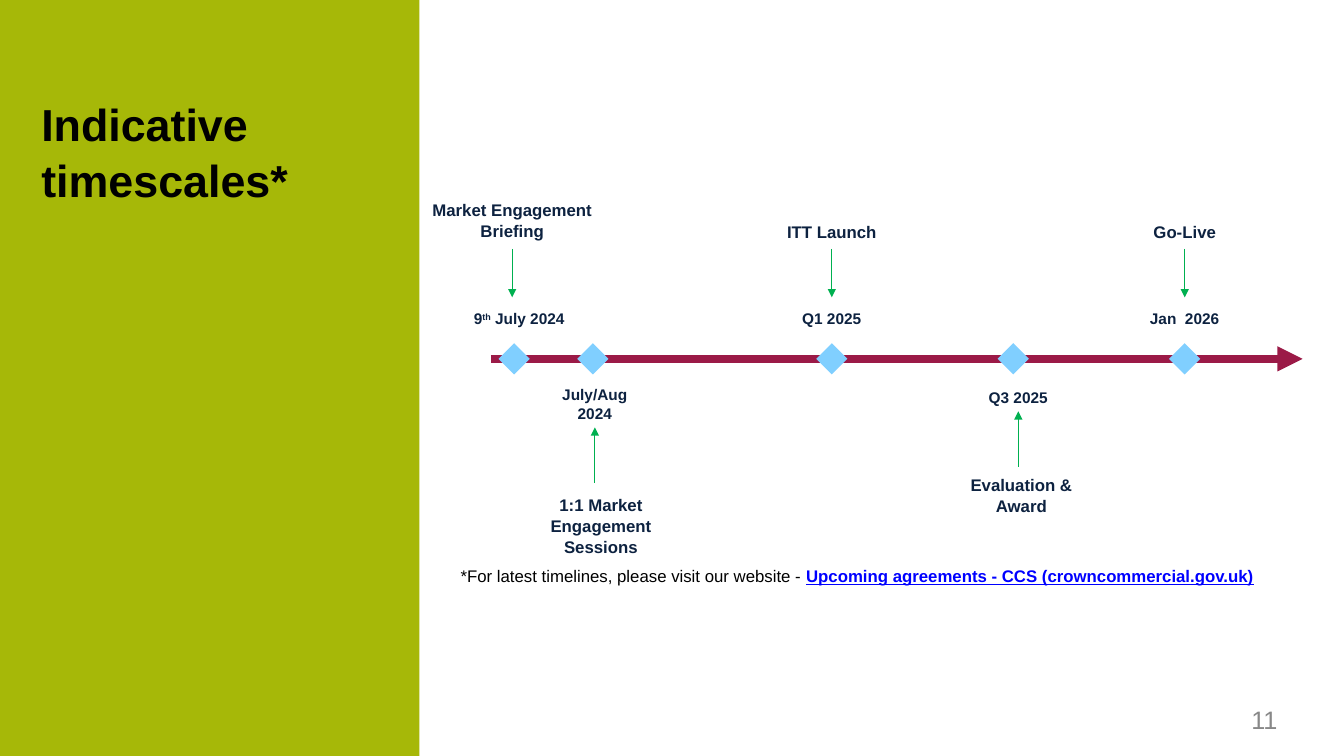
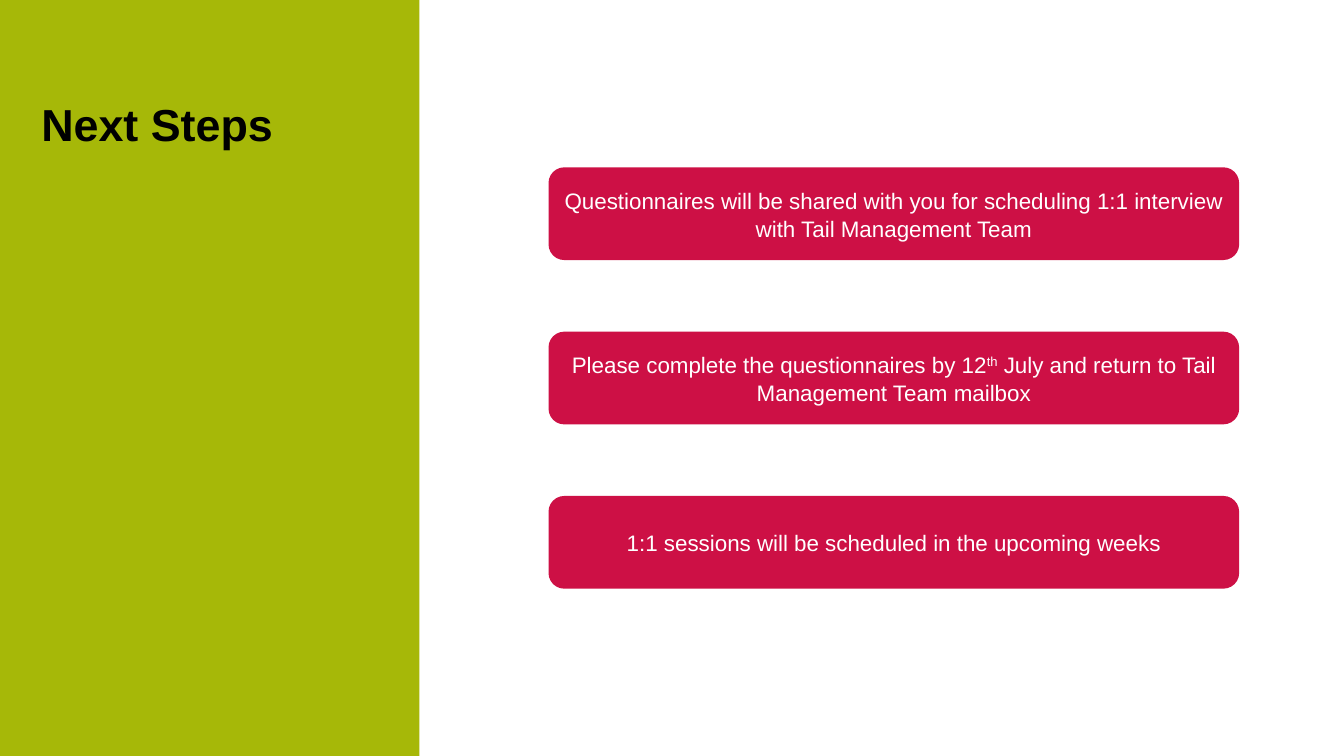
from lxml import etree
from pptx import Presentation
from pptx.dml.color import RGBColor
from pptx.enum import shapes, text
from pptx.oxml import ns
from pptx.util import Inches, Pt

COLORS = {
    "panel": "A6B808", "title": "000000", "number": "888888", "axis": "9B1A47",
    "diamond": "80CFFF", "label": "0D2240", "arrow": "00B050", "link": "0000FF",
    "step": "CD1045", "step_text": "FFFFFF",
}
FONT = "Arial"
SPACING = 1.05
CENTER, LEFT, RIGHT = text.PP_ALIGN.CENTER, text.PP_ALIGN.LEFT, text.PP_ALIGN.RIGHT


def write(sp, runs, size, align, insets=(0, 0), anchor=text.MSO_ANCHOR.TOP):
    tf = sp.text_frame
    tf.word_wrap = True
    tf.vertical_anchor = anchor
    tf.margin_left = tf.margin_right = Inches(insets[0])
    tf.margin_top = tf.margin_bottom = Inches(insets[1])
    p = tf.paragraphs[0]
    p.alignment = align
    p.line_spacing = SPACING
    for content, color, style in runs:
        r = p.add_run()
        r.text = content
        r.font.name = FONT
        r.font.size = Pt(size)
        r.font.color.rgb = RGBColor.from_string(COLORS[color])
        r.font.bold = "b" in style
        r.font.underline = "u" in style
        if "^" in style:
            r.font._element.set("baseline", "30000")


def add_arrow(s, start, end, color, width):
    line = s.shapes.add_connector(
        shapes.MSO_CONNECTOR.STRAIGHT, *[Inches(v) for v in (*start, *end)])
    line.line.color.rgb = RGBColor.from_string(COLORS[color])
    line.line.width = Pt(width)
    etree.SubElement(line.line._get_or_add_ln(), ns.qn("a:tailEnd"), type="triangle")
    etree.SubElement(line._element.spPr, ns.qn("a:effectLst"))


prs = Presentation()
prs.slide_width, prs.slide_height = Inches(13.33), Inches(7.5)

slides = []
for title in ("Indicative timescales*", "Next Steps"):
    s = prs.slides.add_slide(prs.slide_layouts[6])
    panel = s.shapes.add_shape(
        shapes.MSO_SHAPE.RECTANGLE, 0, 0, Inches(4.16), prs.slide_height)
    panel.shadow.inherit = False
    panel.fill.solid()
    panel.fill.fore_color.rgb = RGBColor.from_string(COLORS["panel"])
    panel.line.fill.background()
    sp = s.shapes.add_textbox(Inches(0.41), Inches(0.93), Inches(3.34), Inches(0.92))
    write(sp, [(title, "title", "b")], 32, LEFT)
    slides.append(s)
timeline, steps = slides

sp = timeline.shapes.add_textbox(Inches(12.18), Inches(6.97), Inches(0.49), Inches(0.31))
write(sp, [("11", "number", "")], 18, RIGHT)

AXIS_Y = 3.56
DIAMOND = 0.31
add_arrow(timeline, (4.87, AXIS_Y), (12.92, AXIS_Y), "axis", 6)

july_9 = [("9", "label", "b"), ("th", "label", "b^"), (" July 2024", "label", "b")]
milestones = [
    (5.1, july_9, (5.15, 3.06), 5.08, (2.47, 2.95),
     "Market Engagement Briefing", (5.08, 1.85)),
    (5.88, [("July/Aug 2024", "label", "b")], (5.9, 3.81), 5.9, (4.79, 4.24),
     "1:1 Market Engagement Sessions", (5.96, 4.78)),
    (8.25, [("Q1 2025", "label", "b")], (8.25, 3.06), 8.25, (2.47, 2.95),
     "ITT Launch", (8.25, 2.08)),
    (10.05, [("Q3 2025", "label", "b")], (10.1, 3.84), 10.1, (4.63, 4.08),
     "Evaluation & Award", (10.13, 4.58)),
    (11.75, [("Jan  2026", "label", "b")], (11.75, 3.06), 11.75, (2.47, 2.95),
     "Go-Live", (11.75, 2.08)),
]
for x, date, date_at, arrow_x, arrow_y, label, label_at in milestones:
    sp = timeline.shapes.add_shape(
        shapes.MSO_SHAPE.DIAMOND, Inches(x - DIAMOND / 2), Inches(AXIS_Y - DIAMOND / 2),
        Inches(DIAMOND), Inches(DIAMOND))
    sp.shadow.inherit = False
    sp.fill.solid()
    sp.fill.fore_color.rgb = RGBColor.from_string(COLORS["diamond"])
    sp.line.fill.background()

    add_arrow(timeline, (arrow_x, arrow_y[0]), (arrow_x, arrow_y[1]), "arrow", 0.75)

    above = label_at[1] < AXIS_Y
    label_width, label_height = (2.19, 0.42) if above else (1.68, 0.94)
    for runs, (cx, top), width, height, size, inset in (
        (date, date_at, 0.94, 0.19, 11, 0),
        ([(label, "label", "b")], label_at, label_width, label_height, 12, 0.12),
    ):
        sp = timeline.shapes.add_textbox(
            Inches(cx - width / 2), Inches(top), Inches(width), Inches(height))
        write(sp, runs, size, CENTER, (inset, inset))

sp = timeline.shapes.add_textbox(Inches(4.47), Inches(5.55), Inches(8.57), Inches(0.3))
write(sp, [
    ("*For latest timelines, please visit our website - ", "title", ""),
    ("Upcoming agreements - CCS (crowncommercial.gov.uk)", "link", "bu"),
], 12, LEFT, (0.1, 0.05))

step_runs = [
    [("Questionnaires will be shared with you for scheduling 1:1 interview "
      "with Tail Management Team", "step_text", "")],
    [("Please complete the questionnaires by 12", "step_text", ""),
     ("th", "step_text", "^"),
     (" July and return to Tail Management Team mailbox", "step_text", "")],
    [("1:1 sessions will be scheduled in the upcoming weeks", "step_text", "")],
]
for i, runs in enumerate(step_runs):
    sp = steps.shapes.add_shape(
        shapes.MSO_SHAPE.ROUNDED_RECTANGLE, Inches(5.44), Inches(1.66 + 1.63 * i),
        Inches(6.85), Inches(0.92))
    sp.adjustments[0] = 0.17
    sp.shadow.inherit = False
    sp.fill.solid()
    sp.fill.fore_color.rgb = RGBColor.from_string(COLORS["step"])
    sp.line.fill.background()
    write(sp, runs, 16, CENTER, (0.1, 0.05), text.MSO_ANCHOR.MIDDLE)

prs.save("out.pptx")
